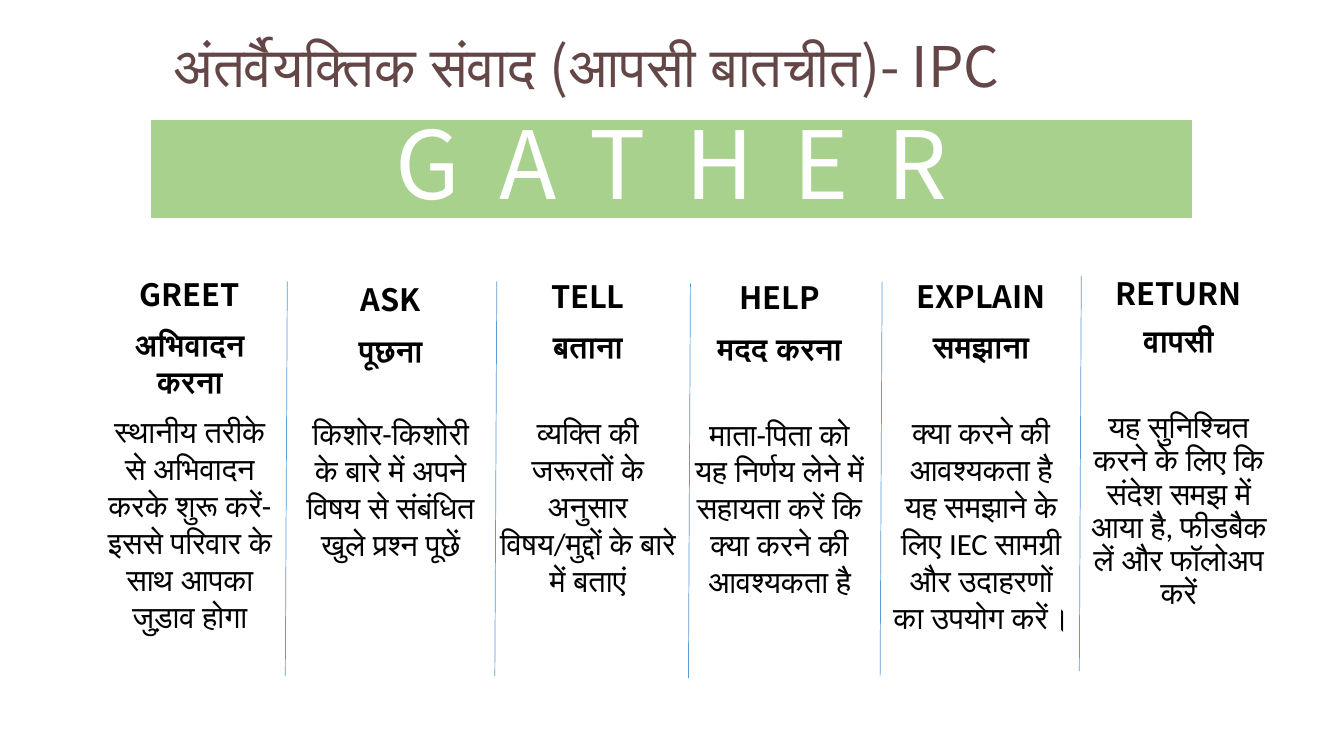
from dataclasses import dataclass

import pptx
import pptx.dml.color
import pptx.enum.shapes
import pptx.enum.text
import pptx.oxml
import pptx.util

Cm = pptx.util.Cm
Pt = pptx.util.Pt
ALIGN = pptx.enum.text.PP_ALIGN
ANCHOR = pptx.enum.text.MSO_ANCHOR


@dataclass(frozen=True)
class Theme:
    heading_font: str = "Noto Sans CJK JP"
    body_font: str = "Calibri"
    title_color: str = "644646"
    text_color: str = "000000"
    white: str = "FFFFFF"
    banner_color: str = "A9D18E"
    divider_color: str = "5B9BD5"
    title_size: float = 40
    banner_size: float = 67.2
    step_size: float = 22
    paragraph_gap: float = 9.4


class SlideBuilder:
    def __init__(self, slide, theme):
        self.slide = slide
        self.theme = theme

    def color(self, value):
        return pptx.dml.color.RGBColor.from_string(value)

    def format_runs(self, paragraph, font, size, color, bold=False):
        for run in paragraph.runs:
            run.font.name = font
            run.font.size = Pt(size)
            run.font.bold = bold
            run.font.color.rgb = self.color(color)

    def title(self, text, left, top, width, height):
        heading = self.slide.shapes.title
        heading.left, heading.top = Cm(left), Cm(top)
        heading.width, heading.height = Cm(width), Cm(height)
        frame = heading.text_frame
        frame.text = text
        frame.word_wrap = True
        frame.auto_size = pptx.enum.text.MSO_AUTO_SIZE.NONE
        frame.vertical_anchor = ANCHOR.BOTTOM
        frame.margin_left = frame.margin_right = frame.margin_top = Cm(0.3)
        frame.margin_bottom = Cm(0.25)
        line = frame.paragraphs[0]
        line.alignment = ALIGN.LEFT
        line.line_spacing = 1.3
        self.format_runs(line, self.theme.heading_font, self.theme.title_size, self.theme.title_color)

    def banner(self, text, left, top, width, height, tracking):
        band = self.slide.shapes.add_shape(
            pptx.enum.shapes.MSO_SHAPE.RECTANGLE, Cm(left), Cm(top), Cm(width), Cm(height))
        band.shadow.inherit = False
        band.fill.solid()
        band.fill.fore_color.rgb = self.color(self.theme.banner_color)
        band.line.color.rgb = self.color(self.theme.white)
        band.line.width = Pt(1.5)
        frame = band.text_frame
        frame.text = text
        frame.vertical_anchor = ANCHOR.MIDDLE
        acronym = frame.paragraphs[0]
        acronym.alignment = ALIGN.CENTER
        acronym.line_spacing = 0.9
        self.format_runs(acronym, self.theme.heading_font, self.theme.banner_size, self.theme.white)
        acronym.runs[0].font._element.set("spc", str(round(tracking * 100)))

    def step(self, texts, left, top, width, height, body_gap, line_spacing):
        box = self.slide.shapes.add_textbox(Cm(left), Cm(top), Cm(width), Cm(height))
        frame = box.text_frame
        frame.word_wrap = True
        frame.text = "\n".join(texts)
        fonts = (self.theme.heading_font, self.theme.heading_font, self.theme.body_font)
        gaps = (0, self.theme.paragraph_gap, body_gap)
        for paragraph, font, gap in zip(frame.paragraphs, fonts, gaps):
            paragraph.alignment = ALIGN.CENTER
            paragraph.line_spacing = line_spacing
            paragraph.space_before = Pt(gap)
            self.format_runs(paragraph, font, self.theme.step_size, self.theme.text_color,
                             bold=font == self.theme.heading_font)

    def divider(self, left, top, height, slant):
        rule = self.slide.shapes.add_connector(
            pptx.enum.shapes.MSO_CONNECTOR.STRAIGHT,
            Cm(left), Cm(top), Cm(left - slant), Cm(top + height))
        rule.line.color.rgb = self.color(self.theme.divider_color)
        rule.line.width = Pt(0.5)
        rule._element.spPr.append(pptx.oxml.parse_xml(
            '<a:effectLst xmlns:a="http://schemas.openxmlformats.org/drawingml/2006/main"/>'))


STEPS = [
    (2.31, 6.83, 9.4, 1.0, ("GREET", "अभिवादन करना",
     "स्थानीय तरीके से अभिवादन करके शुरू करें- इससे परिवार के साथ आपका जुड़ाव होगा")),
    (7.37, 6.96, 33, 1.0, ("ASK", "पूछना",
     "किशोर-किशोरी के बारे में अपने विषय से संबंधित खुले प्रश्न पूछें")),
    (12.34, 6.88, 35, 1.0, ("TELL", "बताना",
     "व्यक्ति की जरूरतों के अनुसार विषय/मुद्दों के बारे में बताएं")),
    (17.17, 6.91, 35, 1.0, ("HELP", "मदद करना",
     "माता-पिता को यह निर्णय लेने में सहायता करें कि क्या करने की आवश्यकता है")),
    (22.25, 6.88, 35, 1.0, ("EXPLAIN", "समझाना",
     "क्या करने की आवश्यकता है यह समझाने के लिए IEC सामग्री और उदाहरणों का उपयोग करें।")),
    (27.23, 6.91, 38, 0.9, ("RETURN", "वापसी",
     "यह सुनिश्चित करने के लिए कि संदेश समझ में आया है, फीडबैक लें और फॉलोअप करें")),
]
DIVIDERS = [(7.24, 7.09), (12.52, 7.09), (17.4, 7.14), (22.23, 7.09), (27.25, 6.96)]


def main():
    deck = pptx.Presentation()
    deck.slide_width, deck.slide_height = Cm(33.87), Cm(19.05)
    title_only = deck.slide_layouts[5]
    builder = SlideBuilder(deck.slides.add_slide(title_only), Theme())
    builder.title("अंतर्वैयक्तिक संवाद (आपसी बातचीत)- IPC", 4.06, 0.76, 25.73, 1.98)
    builder.banner("GATHER", 3.78, 3, 26.29, 2.51, tracking=28.1)
    for left, top, body_gap, line_spacing, texts in STEPS:
        builder.step(texts, left, top, 4.95, 10.34, body_gap, line_spacing)
    for left, top in DIVIDERS:
        builder.divider(left, top, height=9.95, slant=0.05)
    deck.save("out.pptx")


if __name__ == "__main__":
    main()
